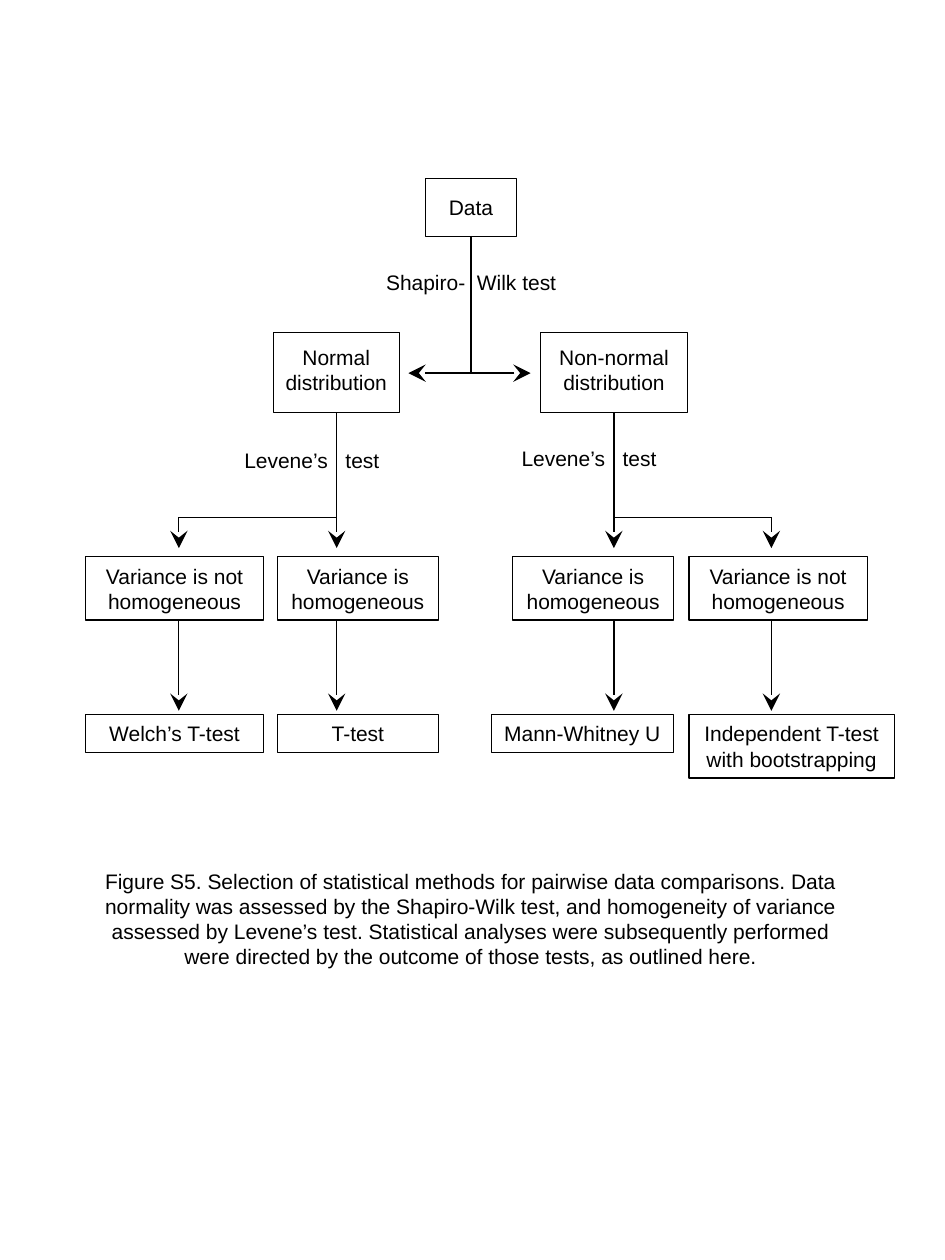
from dataclasses import dataclass

from lxml import etree
from pptx import Presentation
from pptx import util as u
from pptx.dml import color
from pptx.enum import shapes, text
from pptx.oxml import ns

Pt = u.Pt


@dataclass(frozen=True)
class Theme:
    font: str = "Arial"
    size: float = 12
    ink: color.RGBColor = color.RGBColor(0, 0, 0)
    thin: float = 0.5
    line: float = 0.75
    inset_x: float = 6
    inset_y: float = 3.6


theme = Theme()
prs = Presentation()
prs.slide_width, prs.slide_height = Pt(540), Pt(720)
s = prs.slides.add_slide(prs.slide_layouts[6])


def add_text(sp, paragraphs, align=text.PP_ALIGN.CENTER):
    tf = sp.text_frame
    tf.word_wrap = True
    for i, words in enumerate(paragraphs):
        p = tf.paragraphs[0] if i == 0 else tf.add_paragraph()
        p.alignment = align
        r = p.add_run()
        r.text = words
        r.font.name, r.font.size = theme.font, Pt(theme.size)
        r.font.color.rgb = theme.ink
    return tf


def add_line(x1, y1, x2, y2, ends=()):
    sp = s.shapes.add_connector(shapes.MSO_CONNECTOR.STRAIGHT,
                                Pt(x1), Pt(y1), Pt(x2), Pt(y2))
    sp.line.width = Pt(theme.line)
    sp.line.color.rgb = theme.ink
    ln = sp.line._get_or_add_ln()
    for end in ends:
        etree.SubElement(ln, ns.qn(f"a:{end}"), type="stealth", w="lg", len="lg")
    etree.SubElement(sp._element.spPr, ns.qn("a:effectLst"))


# Column positions, from left to right
centers = [102.2, 192.4, 350.8, 440.8]
lefts = [49, 158.4, 293, 393.7]
widths = [101.5, 92.2, 92, 102]
variance = ["Variance is not homogeneous", "Variance is homogeneous"]
variance += variance[::-1]

# Boxes: left, top, width, height, line width, upward text shift, paragraphs
boxes = [
    (243.2, 102, 52, 33.2, theme.thin, 0, ["Data"]),
    (156.2, 190, 72, 45.8, theme.thin, 1.5, ["Normal", "distribution"]),
    (308.9, 190, 84, 45.8, theme.thin, 1.5, ["Non-normal", "distribution"]),
    (49, 408.2, 101.5, 22, theme.line, 0, ["Welch’s T-test"]),
    (158.4, 408.2, 92.2, 22, theme.line, 0, ["T-test"]),
    (280.8, 408.2, 104, 22, theme.line, 0, ["Mann-Whitney U"]),
    (393.7, 408.2, 117.4, 36.4, theme.line, 0,
     ["Independent T-test with bootstrapping"]),
]
boxes += [(x, 318, w, 36.4, theme.line, 0, [words])
          for x, w, words in zip(lefts, widths, variance)]

for x, y, w, h, weight, lift, paragraphs in boxes:
    sp = s.shapes.add_shape(shapes.MSO_SHAPE.RECTANGLE, Pt(x), Pt(y), Pt(w), Pt(h))
    sp.shadow.inherit = False
    sp.fill.background()
    sp.line.color.rgb = theme.ink
    sp.line.width = Pt(weight)
    tf = add_text(sp, paragraphs)
    tf.margin_left = tf.margin_right = Pt(theme.inset_x)
    tf.margin_top = Pt(theme.inset_y)
    tf.margin_bottom = Pt(theme.inset_y + 2 * lift)
    tf.vertical_anchor = text.MSO_ANCHOR.MIDDLE

# Split on normality
trunk = 269.2
add_line(trunk, 134.8, trunk, 212.4)
add_line(303.2, 213.2, 233.4, 213.2, ["headEnd", "tailEnd"])

# Splits on variance: trunk to the inner column, branch to the outer one
for inner, outer in [(1, 0), (2, 3)]:
    add_line(centers[inner], 313.2, centers[inner], 235.6, ["headEnd"])
    add_line(centers[outer], 313.2, centers[outer], 295.4, ["headEnd"])
    add_line(centers[outer], 295.8, centers[inner], 295.8)

# From variance to the chosen test
for x in centers:
    add_line(x, 406.2, x, 354.8, ["headEnd"])

# Test names, half on either side of a trunk: trunk, top, gap, words
half = 60
for x, y, gap, before, after in [
    (trunk, 150.6, 3.3, "Shapiro-", "Wilk test"),
    (centers[1], 252.2, 5, "Levene’s", "test"),
    (centers[2], 251.2, 5, "Levene’s", "test"),
]:
    for left, words, align in [
        (x - gap - half, before, text.PP_ALIGN.RIGHT),
        (x + gap, after, text.PP_ALIGN.LEFT),
    ]:
        sp = s.shapes.add_textbox(Pt(left), Pt(y), Pt(half), Pt(21.8))
        tf = add_text(sp, [words], align)
        tf.margin_left = tf.margin_right = 0

# Caption
sp = s.shapes.add_textbox(Pt(46.6), Pt(492.5), Pt(445), Pt(65.4))
add_text(sp, [
    "Figure S5. Selection of statistical methods for pairwise data comparisons. "
    "Data normality was assessed by the Shapiro-Wilk test, and homogeneity of "
    "variance assessed by Levene’s test. Statistical analyses were subsequently "
    "performed were directed by the outcome of those tests, as outlined here."
])

prs.save("out.pptx")
